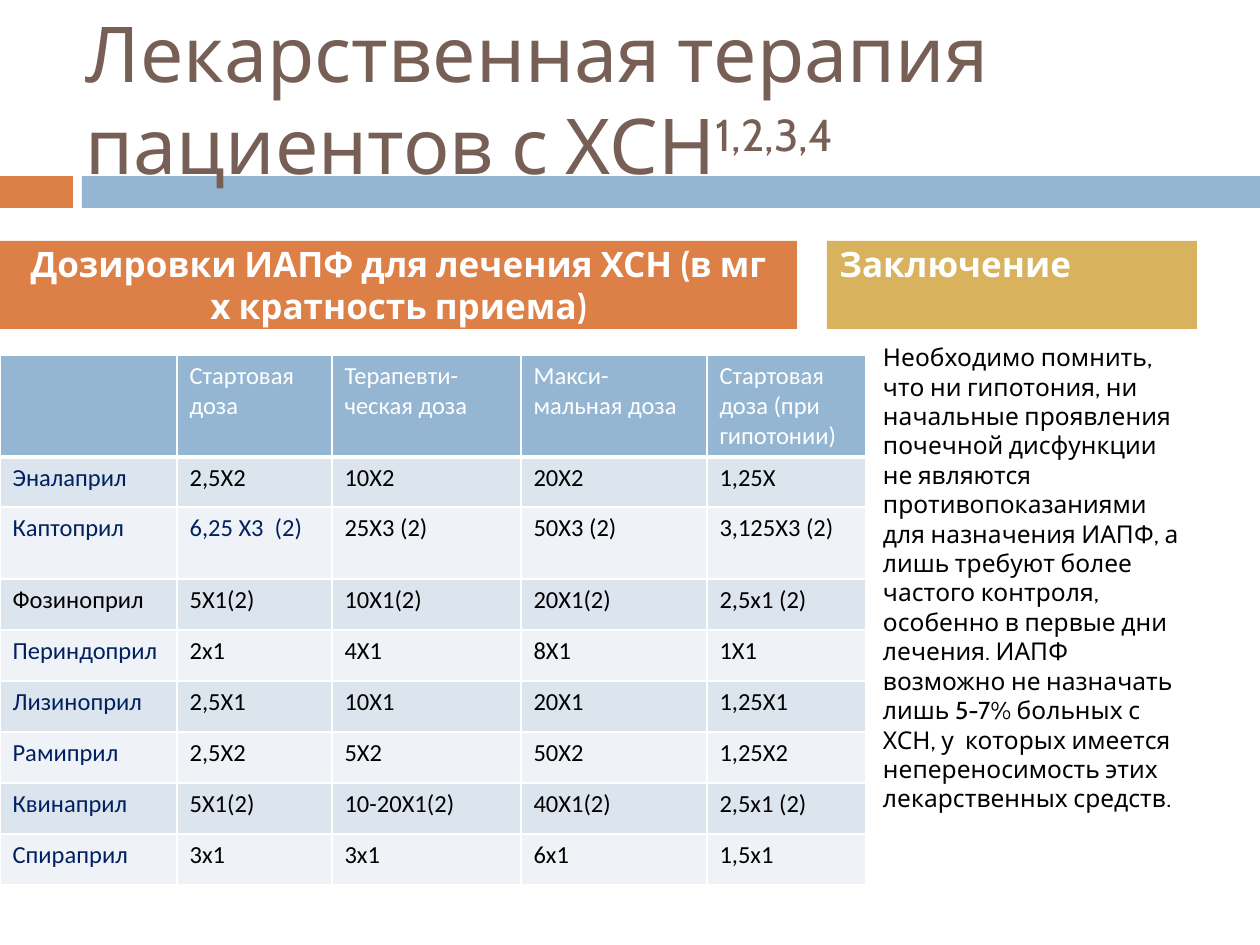
from lxml import etree
from pptx import Presentation
from pptx.dml.color import RGBColor
from pptx.enum.shapes import MSO_SHAPE
from pptx.enum.text import MSO_ANCHOR, MSO_AUTO_SIZE, PP_ALIGN
from pptx.oxml.ns import qn
from pptx.util import Pt

RECT = MSO_SHAPE.RECTANGLE
TOP, MIDDLE = MSO_ANCHOR.TOP, MSO_ANCHOR.MIDDLE
LEFT, CENTER = PP_ALIGN.LEFT, PP_ALIGN.CENTER
NO_FIT = MSO_AUTO_SIZE.NONE

# Content
TITLE = "Лекарственная терапия пациентов с ХСН"
REFERENCES = "1,2,3,4"
DOSES_HEADING = "Дозировки ИАПФ для лечения ХСН (в мг\vх кратность приема)"
CONCLUSION_HEADING = "Заключение"
CONCLUSION = (
    "Необходимо помнить, что ни гипотония, ни начальные проявления почечной "
    "дисфункции не являются противопоказаниями для назначения ИАПФ, а лишь "
    "требуют более частого контроля, особенно в первые дни лечения. ИАПФ "
    "возможно не назначать лишь 5-7% больных с ХСН, у  которых имеется "
    "непереносимость этих лекарственных средств."
)
DOSES = [
    ("", "Стартовая\nдоза", "Терапевти-ческая доза", "Макси-мальная доза",
     "Стартовая доза (при гипотонии)"),
    ("Эналаприл", "2,5Х2", "10Х2", "20Х2", "1,25Х"),
    ("Каптоприл", "6,25 Х3  (2)", "25Х3 (2)", "50Х3 (2)", "3,125Х3 (2)"),
    ("Фозиноприл", "5Х1(2)", "10Х1(2)", "20Х1(2)", "2,5х1 (2)"),
    ("Периндоприл", "2х1", "4Х1", "8Х1", "1Х1"),
    ("Лизиноприл", "2,5Х1", "10Х1", "20Х1", "1,25Х1"),
    ("Рамиприл", "2,5Х2", "5Х2", "50Х2", "1,25Х2"),
    ("Квинаприл", "5Х1(2)", "10-20Х1(2)", "40Х1(2)", "2,5х1 (2)"),
    ("Спираприл", "3х1", "3х1", "6х1", "1,5х1"),
]
# Cells (row, column) in navy: every drug name but one, and one dose
NAVY_CELLS = {(r, 0) for r in range(1, len(DOSES))} - {(3, 0)} | {(2, 1)}

THEME = {
    "title": "775F55", "orange": "DD8047", "blue": "94B6D2", "gold": "D8B25C",
    "bands": ("EFF3F7", "DCE5EE"), "navy": "002060", "black": "000000",
    "white": "FFFFFF", "font": "Cabin", "table_font": "Calibri",
    "title_size": 44, "heading_size": 20, "body_size": 14,
}

# Layout in px
SLIDE = (1260, 945)
TITLE_BOX = (73, 38, 1124, 119)
BARS = [((0, 176, 73, 32), "orange"), ((82, 176, 1178, 32), "blue")]
HEADINGS = [
    (DOSES_HEADING, (0, 241, 797, 88), "orange", MIDDLE, CENTER),
    (CONCLUSION_HEADING, (827, 241, 370, 88), "gold", TOP, LEFT),
]
CONCLUSION_BOX = (827, 336, 370, 494)
CONCLUSION_INDENT = 56
TABLE_POS = (0, 355)
COLUMNS = [177, 155, 189, 186, 159]
ROWS = [102, 50, 72] + [51] * 6


def px(n):
    return round(n * 914400 / 126)


def box(rect):
    return [px(n) for n in rect]


def color(name):
    return RGBColor.from_string(THEME.get(name, name))


def style(p, size, fill, font="font", bold=False):
    for r in p.runs:
        r.font.size = Pt(THEME[size])
        r.font.name = THEME[font]
        r.font.color.rgb = color(fill)
        r.font.bold = bold


def add_rect(s, rect, fill):
    sp = s.shapes.add_shape(RECT, *box(rect))
    sp.shadow.inherit = False
    sp.fill.solid()
    sp.fill.fore_color.rgb = color(fill)
    sp.line.fill.background()
    return sp


def set_borders(cell, widths):
    tcPr = cell._tc.get_or_add_tcPr()
    for i, (side, width) in enumerate(widths.items()):
        ln = etree.Element(qn(f"a:ln{side}"), w=str(Pt(width)))
        fill = etree.SubElement(ln, qn("a:solidFill"))
        etree.SubElement(fill, qn("a:srgbClr"), val=THEME["white"])
        tcPr.insert(i, ln)


def add_title(s):
    title = s.shapes.title
    title.left, title.top, title.width, title.height = box(TITLE_BOX)
    tf = title.text_frame
    tf.text = TITLE
    tf.word_wrap = True
    tf.auto_size = NO_FIT
    tf.vertical_anchor = MIDDLE
    p = tf.paragraphs[0]
    p.alignment = LEFT
    r = p.add_run()
    r.text = REFERENCES
    style(p, "title_size", "title")
    r.font._element.set("baseline", "30000")
    # The title lies over the bars
    title.element.getparent().append(title.element)


def add_heading(s, text, rect, fill, anchor, align):
    tf = add_rect(s, rect, fill).text_frame
    tf.text = text
    tf.word_wrap = True
    tf.vertical_anchor = anchor
    tf.margin_top = tf.margin_bottom = px(2)
    p = tf.paragraphs[0]
    p.alignment = align
    style(p, "heading_size", "white", bold=True)


def add_conclusion(s):
    tf = s.shapes.add_textbox(*box(CONCLUSION_BOX)).text_frame
    tf.text = CONCLUSION
    tf.word_wrap = True
    tf.margin_left = px(CONCLUSION_INDENT)
    style(tf.paragraphs[0], "body_size", "black")


def add_doses(s):
    frame = s.shapes.add_table(len(ROWS), len(COLUMNS),
                               *box(TABLE_POS + (sum(COLUMNS), sum(ROWS))))
    table = frame.table
    table.first_row = table.horz_banding = False
    for column, width in zip(table.columns, COLUMNS):
        column.width = px(width)
    for r, (values, height) in enumerate(zip(DOSES, ROWS)):
        table.rows[r].height = px(height)
        for c, value in enumerate(values):
            cell = table.cell(r, c)
            cell.text = value
            cell.fill.solid()
            fill = THEME["bands"][r % 2] if r else "blue"
            cell.fill.fore_color.rgb = color(fill)
            ink = "navy" if (r, c) in NAVY_CELLS else "black" if r else "white"
            for p in cell.text_frame.paragraphs:
                style(p, "body_size", ink, "table_font")
            set_borders(cell, {"L": 1, "R": 1, "T": 3 if r == 1 else 1,
                               "B": 3 if r == 0 else 1})


def main():
    prs = Presentation()
    prs.slide_width, prs.slide_height = box(SLIDE)
    s = prs.slides.add_slide(prs.slide_layouts[5])
    for rect, fill in BARS:
        add_rect(s, rect, fill)
    add_title(s)
    add_conclusion(s)
    for heading in HEADINGS:
        add_heading(s, *heading)
    add_doses(s)
    prs.save("out.pptx")


if __name__ == "__main__":
    main()
